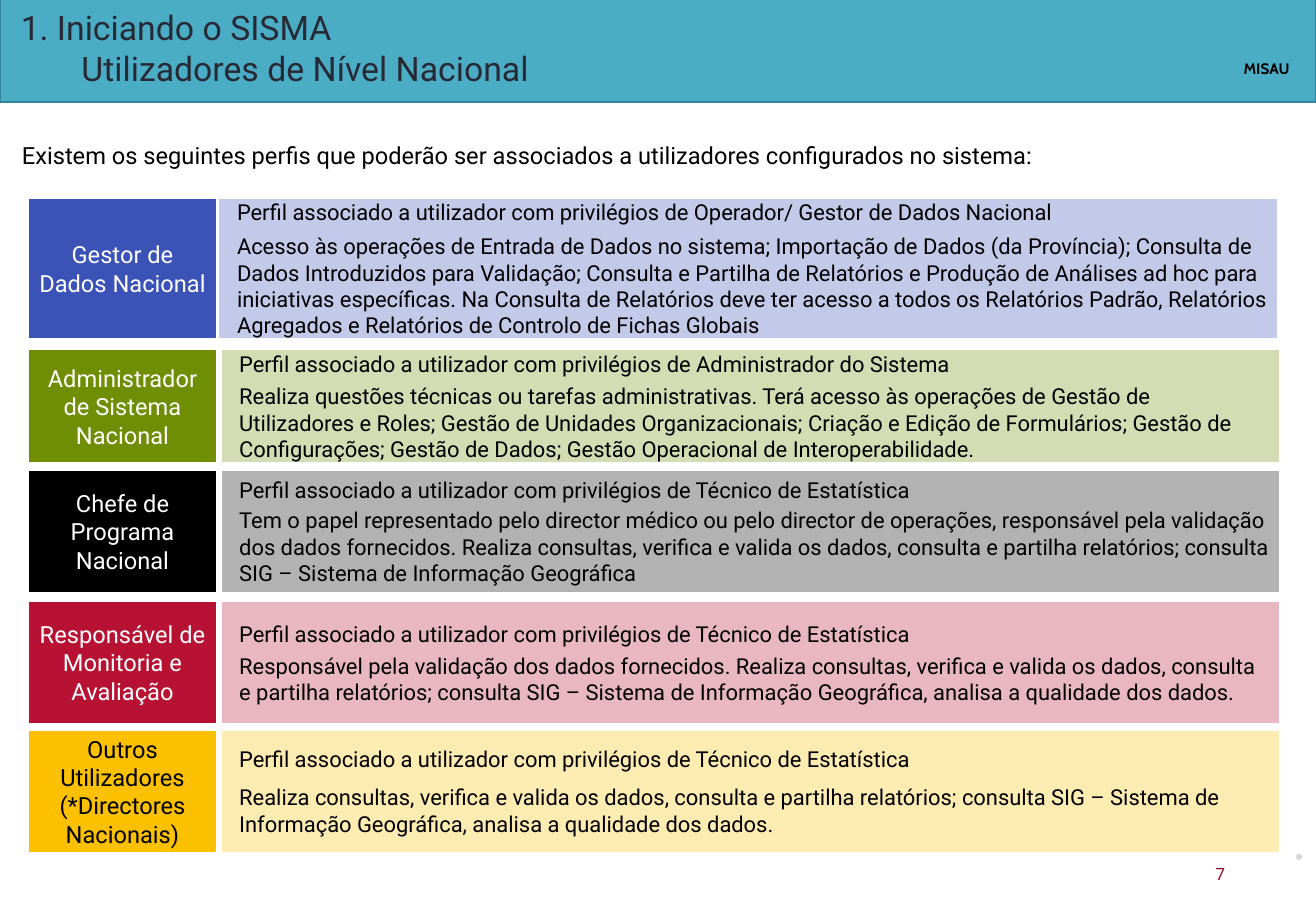
from dataclasses import dataclass

from lxml.etree import SubElement
from pptx import Presentation
from pptx.dml.color import RGBColor
from pptx.enum.shapes import MSO_SHAPE as Preset
from pptx.enum.text import MSO_ANCHOR as Anchor, MSO_AUTO_SIZE as AutoSize, PP_ALIGN as Align
from pptx.oxml.ns import qn
from pptx.util import Pt

WHITE = RGBColor(0xFF, 0xFF, 0xFF)
BLACK = RGBColor(0x00, 0x00, 0x00)
TEAL = RGBColor(0x4B, 0xAC, 0xC6)
DARK_TEAL = RGBColor(0x31, 0x84, 0x9B)
INK = RGBColor(0x27, 0x2A, 0x34)
WINE = RGBColor(0x8C, 0x0B, 0x26)
LIGHT_GREY = RGBColor(0xD9, 0xD9, 0xD9)
BLUE = RGBColor(0x3B, 0x52, 0xB7)
GREEN = RGBColor(0x70, 0x8E, 0x03)
RED = RGBColor(0xB7, 0x12, 0x34)
YELLOW = RGBColor(0xFB, 0xC1, 0x00)

PAGE_WIDTH, PAGE_HEIGHT = 780, 540
LABEL_LEFT, LABEL_WIDTH, DETAIL_WIDTH = 15.9, 113.5, 629
STATISTICS = "Perfil associado a utilizador com privilégios de Técnico de Estatística"


@dataclass
class Profile:
    """One user profile: its label, its description and its place."""
    label: str
    heading: str
    detail: str
    color: RGBColor
    top: float
    height: float
    gap: float
    label_color: RGBColor = WHITE
    detail_left: float = 130.3


PROFILES = [
    Profile("Gestor de Dados Nacional",
            "Perfil associado a utilizador com privilégios de Operador/ Gestor de Dados Nacional",
            "Acesso às operações de Entrada de Dados no sistema; Importação de Dados (da Província); "
            "Consulta de Dados Introduzidos para Validação; Consulta e Partilha de Relatórios e "
            "Produção de Análises ad hoc para iniciativas específicas. Na Consulta de Relatórios deve "
            "ter acesso a todos os Relatórios Padrão, Relatórios Agregados e Relatórios de Controlo "
            "de Fichas Globais",
            BLUE, 116.6, 85, 4.7, detail_left=129),
    Profile("Administrador de Sistema Nacional",
            "Perfil associado a utilizador com privilégios de Administrador do Sistema",
            "Realiza questões técnicas ou tarefas administrativas. Terá acesso às operações de Gestão "
            "de Utilizadores e Roles; Gestão de Unidades Organizacionais; Criação e Edição de "
            "Formulários; Gestão de Configurações; Gestão de Dados; Gestão Operacional de "
            "Interoperabilidade.",
            GREEN, 206.6, 68.4, 3.5),
    Profile("Chefe de Programa Nacional", STATISTICS,
            "Tem o papel representado pelo director médico ou pelo director de operações, responsável "
            "pela validação dos dados fornecidos. Realiza consultas, verifica e valida os dados, "
            "consulta e partilha relatórios; consulta SIG – Sistema de Informação Geográfica",
            BLACK, 277.9, 74, 2.4),
    Profile("Responsável de Monitoria e Avaliação", STATISTICS,
            "Responsável pela validação dos dados fornecidos. Realiza consultas, verifica e valida os "
            "dados, consulta e partilha relatórios; consulta SIG – Sistema de Informação Geográfica, "
            "analisa a qualidade dos dados.",
            RED, 355.7, 74, 3.5),
    Profile("Outros Utilizadores (*Directores Nacionais)", STATISTICS,
            "Realiza consultas, verifica e valida os dados, consulta e partilha relatórios; consulta "
            "SIG – Sistema de Informação Geográfica, analisa a qualidade dos dados.",
            YELLOW, 432, 74, 7, label_color=BLACK),
]


def add_span(para, text, size, color, font="Roboto", bold=False):
    """Add one formatted run to a paragraph."""
    span = para.add_run()
    span.text = text
    span.font.size = Pt(size)
    span.font.name = font
    span.font.bold = bold
    span.font.color.rgb = color


def set_frame(frame, insets, anchor):
    """Set wrapping, insets (left, top, right, bottom) and anchor of a text frame."""
    frame.word_wrap = True
    frame.auto_size = AutoSize.NONE
    frame.vertical_anchor = anchor
    (frame.margin_left, frame.margin_top,
     frame.margin_right, frame.margin_bottom) = map(Pt, insets)


def place(shape, left, top, width, height):
    """Move and size a placeholder."""
    shape.left, shape.top, shape.width, shape.height = map(Pt, (left, top, width, height))


def add_block(page, box, fill, line=None, weight=2.25, preset=Preset.RECTANGLE, opacity=None):
    """Add a flat filled shape in the given box."""
    block = page.shapes.add_shape(preset, *map(Pt, box))
    block.shadow.inherit = False
    block.fill.solid()
    block.fill.fore_color.rgb = fill
    if opacity is not None:
        tint = block.element.spPr.find(qn("a:solidFill"))[0]
        SubElement(tint, qn("a:alpha"), val=str(opacity * 1000))
    if line is None:
        block.line.fill.background()
    else:
        block.line.color.rgb = line
        block.line.width = Pt(weight)
    return block


def add_note(page, box, text, size, color, font):
    """Add a one-line text box."""
    note = page.shapes.add_textbox(*map(Pt, box))
    set_frame(note.text_frame, (7.2, 3.6, 7.2, 3.6), Anchor.TOP)
    note.text_frame.word_wrap = False
    add_span(note.text_frame.paragraphs[0], text, size, color, font, bold=font == "Cabin")


def build_header(page, left, top, width, height):
    """Draw the title band with the two-line title and the ministry mark."""
    band = add_block(page, (left, top, width, height), TEAL, DARK_TEAL, 0.75)
    title = page.shapes.title
    band.element.addnext(title.element)
    place(title, left + 10.1, top + 2.9, 646.6, 56.2)
    set_frame(title.text_frame, (2.2, 2.2, 2.2, 2.2), Anchor.MIDDLE)
    para = title.text_frame.paragraphs[0]
    para.alignment = Align.LEFT
    add_span(para, "1. Iniciando o SISMA", 20, INK)
    para.add_line_break()
    add_span(para, "\tUtilizadores de Nível Nacional", 20, INK)
    add_note(page, (left + 730.1, top + 34.6, 44, 18), "MISAU", 9, BLACK, "Cabin")


def build_intro(page, left, top, width, height):
    """Fill the body placeholder with the introductory sentence."""
    body = page.placeholders[1]
    place(body, left, top, width, height)
    set_frame(body.text_frame, (2.9, 2.9, 2.9, 2.9), Anchor.TOP)
    para = body.text_frame.paragraphs[0]
    properties = para._p.get_or_add_pPr()
    properties.set("marL", "0")
    properties.set("indent", "0")
    SubElement(properties, qn("a:buNone"))
    para.alignment = Align.JUSTIFY
    para.line_spacing = 1.2
    para.space_before = Pt(0)
    para.space_after = Pt(12)
    add_span(para, "Existem os seguintes perfis que poderão ser associados a utilizadores "
                   "configurados no sistema:", 14, BLACK)


def build_profile(page, profile, left):
    """Draw one profile row: solid label and tinted description."""
    label = add_block(page, (left, profile.top, LABEL_WIDTH, profile.height), profile.color, WHITE)
    set_frame(label.text_frame, (7.2, 3.6, 7.2, 3.6), Anchor.MIDDLE)
    para = label.text_frame.paragraphs[0]
    para.alignment = Align.CENTER
    add_span(para, profile.label, 14, profile.label_color)

    detail = add_block(page, (profile.detail_left, profile.top, DETAIL_WIDTH, profile.height),
                       profile.color, WHITE, opacity=30)
    frame = detail.text_frame
    set_frame(frame, (11.5, 3.6, 7.2, 3.6), Anchor.MIDDLE)
    heading, description = frame.paragraphs[0], frame.add_paragraph()
    description.space_before = Pt(profile.gap)
    for para, text in ((heading, profile.heading), (description, profile.detail)):
        para.alignment = Align.LEFT
        add_span(para, text, 13, BLACK)


def build_footer(page, left, top):
    """Draw the page number and the small dot at its upper right."""
    add_note(page, (left, top, 45, 19.4), "7", 10, WINE, "Roboto")
    add_block(page, (left + 54.7, top - 2.2, 3.6, 3.6), LIGHT_GREY, preset=Preset.OVAL)


def main():
    """Build the deck and save it."""
    deck = Presentation()
    deck.slide_width, deck.slide_height = Pt(PAGE_WIDTH), Pt(PAGE_HEIGHT)
    page = deck.slides.add_slide(deck.slide_layouts[1])
    build_header(page, 0, -2.9, PAGE_WIDTH, 63.4)
    build_intro(page, 10.1, 77, 748, 420)
    for profile in PROFILES:
        build_profile(page, profile, LABEL_LEFT)
    build_footer(page, 713.5, 508.3)
    deck.save("out.pptx")


if __name__ == "__main__":
    main()
